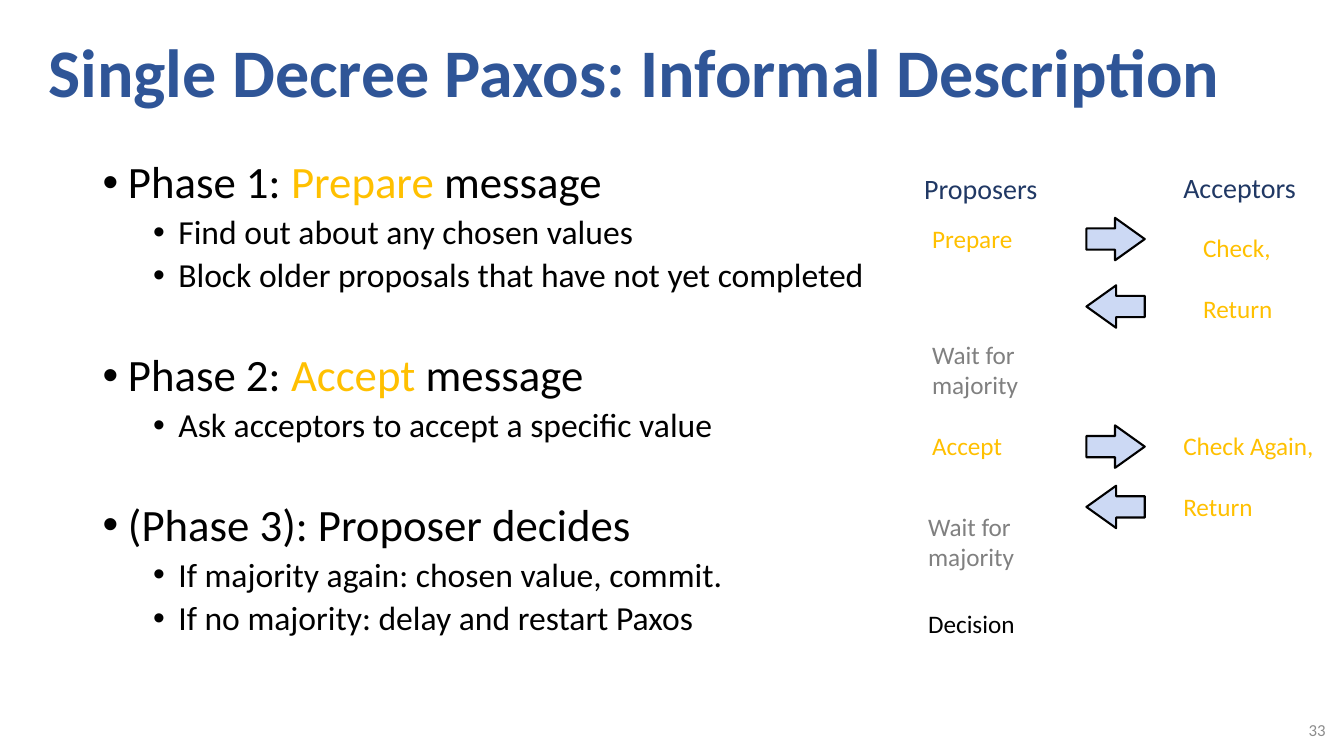
from lxml.etree import SubElement
from pptx import Presentation
from pptx.dml.color import RGBColor
from pptx.enum.shapes import MSO_SHAPE
from pptx.enum.text import MSO_ANCHOR, PP_ALIGN
from pptx.oxml.ns import qn
from pptx.util import Cm, Pt

FONT = "Calibri"
BLACK = RGBColor(0x00, 0x00, 0x00)
GRAY = RGBColor(0x80, 0x80, 0x80)
PALE_GRAY = RGBColor(0x8C, 0x8C, 0x8C)
GOLD = RGBColor(0xFF, 0xC0, 0x00)
BLUE = RGBColor(0x2F, 0x55, 0x97)
NAVY = RGBColor(0x20, 0x38, 0x64)
ARROW_FILL = RGBColor(0xCC, 0xD9, 0xF4)

# Each phase: spans of the heading, then its points
PHASES = [
    ([("Phase 1: ", BLACK), ("Prepare ", GOLD), ("message", BLACK)],
     ["Find out about any chosen values",
      "Block older proposals that have not yet completed"]),
    ([("Phase 2: ", BLACK), ("Accept ", GOLD), ("message", BLACK)],
     ["Ask acceptors to accept a specific value"]),
    ([("(Phase 3): Proposer decides", BLACK)],
     ["If majority again: chosen value, commit.",
      "If no majority: delay and restart Paxos"]),
]

# Left, top, width and height in cm within the message flow
FLOW_LABELS = [
    (0, 0.02, 3.56, 1.12, ["Proposers"], 20, NAVY, 0),
    (6.53, 0, 4.27, 1.12, ["Acceptors"], 20, NAVY, 0),
    (0.2, 1.34, 2.57, 1.02, ["Prepare"], 18, GOLD, 0),
    (7.03, 1.57, 2.29, 2.57, ["Check,", "Return"], 18, GOLD, 22),
    (0.2, 4.26, 2.9, 1.8, ["Wait for", "majority"], 18, GRAY, 0),
    (0.2, 6.55, 2.4, 1.02, ["Accept"], 18, GOLD, 0),
    (6.53, 6.55, 4, 2.57, ["Check Again,", "Return"], 18, GOLD, 22),
    (0.1, 8.58, 2.9, 1.8, ["Wait for", "majority"], 18, GRAY, 0),
    (0.1, 11.04, 2.9, 1.02, ["Decision"], 18, BLACK, 0),
]
FLOW_ARROWS = [
    (1.32, MSO_SHAPE.RIGHT_ARROW),
    (3.02, MSO_SHAPE.LEFT_ARROW),
    (6.55, MSO_SHAPE.RIGHT_ARROW),
    (8.07, MSO_SHAPE.LEFT_ARROW),
]


def style(para, size, color, bold=False):
    para.font.name = FONT
    para.font.size = Pt(size)
    para.font.bold = bold
    if color is not None:
        para.font.color.rgb = color


def add_text(page, left, top, width, height, lines, size, color,
             gap=0, bold=False, anchor=MSO_ANCHOR.TOP):
    """Add a text box with one paragraph a line, gap points apart."""
    box = page.shapes.add_textbox(Cm(left), Cm(top), Cm(width), Cm(height))
    frame = box.text_frame
    frame.word_wrap = True
    frame.vertical_anchor = anchor
    frame.text = "\n".join(lines)
    for index, para in enumerate(frame.paragraphs):
        style(para, size, color, bold)
        if index:
            para.space_before = Pt(gap)
    return frame


def add_bullet(para, level):
    props = para._p.get_or_add_pPr()
    props.set("marL", str(Cm(0.635 + 1.27 * level)))
    props.set("indent", str(Cm(-0.635)))
    SubElement(props, qn("a:buFont"), typeface="Arial")
    SubElement(props, qn("a:buChar"), char="•")


def add_title(page, left, top, width, height):
    frame = add_text(page, left, top, width, height,
                     ["Single Decree Paxos: Informal Description"],
                     48.6, BLUE, bold=True, anchor=MSO_ANCHOR.MIDDLE)
    frame.paragraphs[0].line_spacing = 0.9


def add_phases(page, left, top, width, height):
    box = page.shapes.add_textbox(Cm(left), Cm(top), Cm(width), Cm(height))
    frame = box.text_frame
    frame.word_wrap = True
    para = frame.paragraphs[0]
    for number, (heading, points) in enumerate(PHASES):
        if number:
            para = frame.add_paragraph()
        para.line_spacing = 0.9
        para.space_before = Pt(41.4 if number else 10)
        style(para, 32, None)
        add_bullet(para, 0)
        for text, color in heading:
            span = para.add_run()
            span.text = text
            span.font.color.rgb = color
        for point in points:
            para = frame.add_paragraph()
            para.text = point
            para.level = 1
            para.line_spacing = 0.9
            para.space_before = Pt(5)
            style(para, 24, BLACK)
            add_bullet(para, 1)


def add_message_flow(page, left, top):
    for y, kind in FLOW_ARROWS:
        arrow = page.shapes.add_shape(kind, Cm(left + 4.34), Cm(top + y),
                                      Cm(1.47), Cm(1.07))
        arrow.adjustments[0] = 0.5
        arrow.adjustments[1] = 0.7
        arrow.shadow.inherit = False
        arrow.fill.solid()
        arrow.fill.fore_color.rgb = ARROW_FILL
        arrow.line.color.rgb = BLACK
        arrow.line.width = Pt(1.5)
    for x, y, width, height, lines, size, color, gap in FLOW_LABELS:
        add_text(page, left + x, top + y, width, height, lines, size, color, gap)


def add_page_number(page, left, top, width, height):
    frame = add_text(page, left, top, width, height, ["33"], 12, PALE_GRAY,
                     anchor=MSO_ANCHOR.MIDDLE)
    frame.paragraphs[0].alignment = PP_ALIGN.RIGHT


def main():
    deck = Presentation()
    deck.slide_width = Cm(33.87)
    deck.slide_height = Cm(19.05)
    page = deck.slides.add_slide(deck.slide_layouts[6])
    add_phases(page, 2.34, 3.91, 20.17, 14.88)
    add_title(page, 0.97, 0.25, 31.83, 3.28)
    add_message_flow(page, 23.04, 4.17)
    add_page_number(page, 32.36, 17.88, 1.3, 1.02)
    deck.save("out.pptx")


if __name__ == "__main__":
    main()
